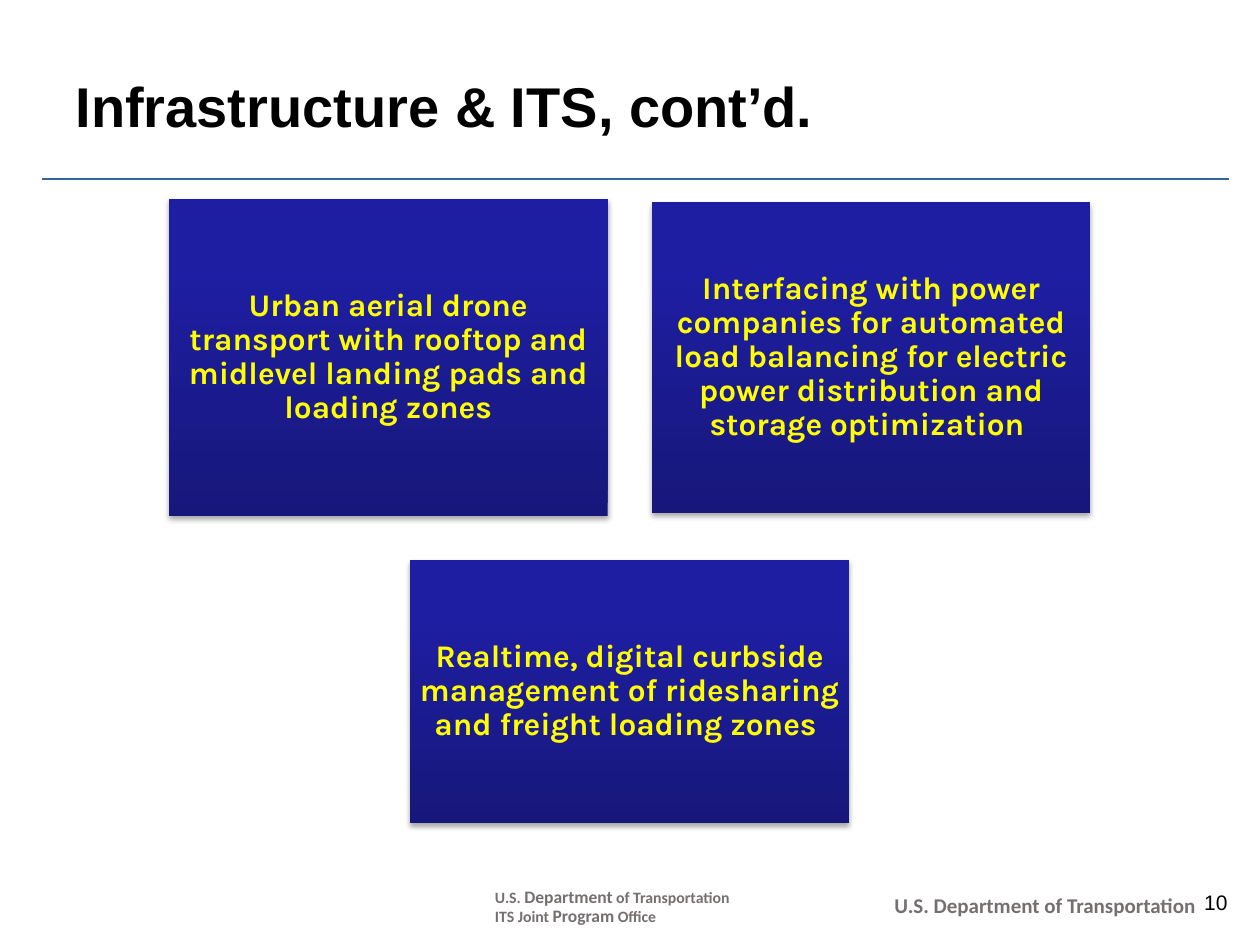
from lxml import etree
from pptx import Presentation
from pptx.dml.color import RGBColor
from pptx.enum.shapes import MSO_CONNECTOR, MSO_SHAPE
from pptx.enum.text import MSO_ANCHOR, PP_ALIGN
from pptx.oxml import parse_xml
from pptx.oxml.ns import nsdecls, qn
from pptx.util import Pt

COLORS = {"rule": "336699", "text": "000000", "footer": "757070",
          "card_text": "FFFF00", "bottom": "17177B", "middle": "1E1EA3",
          "top": "1C1CA5", "shadow": "000000"}


def add_span(para, text, size, font, color, bold=True):
    span = para.add_run()
    span.text = text
    formats = {"size": Pt(size), "name": font, "bold": bold}
    for name, value in formats.items():
        setattr(span.font, name, value)
    span.font.color.rgb = RGBColor.from_string(COLORS[color])


def add_box(left, top, width, height):
    box = page.shapes.add_textbox(Pt(left), Pt(top), Pt(width), Pt(height))
    box.text_frame.word_wrap = True
    return box.text_frame


deck = Presentation()
deck.slide_width, deck.slide_height = Pt(720), Pt(540)
page = deck.slides.add_slide(deck.slide_layouts[5])

# Title
title = page.shapes.title
place = {"left": 36, "top": 30.24, "width": 648, "height": 59.76}
for name, value in place.items():
    setattr(title, name, Pt(value))
title.text_frame.vertical_anchor = MSO_ANCHOR.MIDDLE
para = title.text_frame.paragraphs[0]
para.alignment = PP_ALIGN.LEFT
add_span(para, "Infrastructure & ITS, cont’d.", 32, "Arial", "text")

# Rule under the title
rule = page.shapes.add_connector(
    MSO_CONNECTOR.STRAIGHT, Pt(24), Pt(102.24), Pt(702), Pt(102.24))
rule.line.color.rgb = RGBColor.from_string(COLORS["rule"])
rule.line.width = Pt(1.5)
etree.SubElement(rule._element.spPr, qn("a:effectLst"))

# Cards: left, top, height, text
CARD_WIDTH = 250.8
cards = [
    (96.5, 113.76, 180.9, "Urban aerial drone transport with rooftop and "
     "midlevel landing pads and loading zones"),
    (372.4, 115.7, 177.4, "Interfacing with power companies for automated load "
     "balancing for electric power distribution and storage optimization "),
    (234.4, 319.9, 150.4, "Realtime, digital curbside management of "
     "ridesharing and freight loading zones "),
]
stops = "".join(
    f'<a:gs pos="{percent * 1000}"><a:srgbClr val="{COLORS[name]}"/></a:gs>'
    for percent, name in [(0, "bottom"), (80, "middle"), (100, "top")])
gradient = (f'<a:gradFill {nsdecls("a")} rotWithShape="1"><a:gsLst>{stops}</a:gsLst>'
            '<a:lin ang="16200000" scaled="0"/></a:gradFill>')
no_line = f'<a:ln {nsdecls("a")}><a:noFill/></a:ln>'
shadow = (f'<a:effectLst {nsdecls("a")}><a:outerShdw blurRad="{Pt(3.1)}" '
          f'dist="{Pt(1.8)}" dir="5400000" rotWithShape="0">'
          f'<a:srgbClr val="{COLORS["shadow"]}"><a:alpha val="35000"/></a:srgbClr>'
          '</a:outerShdw></a:effectLst>')

for left, top, height, text in cards:
    card = page.shapes.add_shape(
        MSO_SHAPE.RECTANGLE, Pt(left), Pt(top), Pt(CARD_WIDTH), Pt(height))
    for xml in (gradient, no_line, shadow):
        card._element.spPr.append(parse_xml(xml))
    frame = card.text_frame
    frame.word_wrap = True
    frame.vertical_anchor = MSO_ANCHOR.MIDDLE
    for side in ("left", "top", "right", "bottom"):
        setattr(frame, f"margin_{side}", Pt(5))
    para = frame.paragraphs[0]
    para.alignment = PP_ALIGN.CENTER
    para.line_spacing = 0.9
    add_span(para, text, 18, "Karla", "card_text")

# Footer: office, department, page number
office = add_box(275.76, 504, 149, 26)
office_lines = [
    [("U.S. ", 9), ("Department", 10), (" of Transportation", 9)],
    [("ITS Joint ", 9), ("Program", 10), (" Office", 9)],
]
for index, line in enumerate(office_lines):
    para = office.add_paragraph() if index else office.paragraphs[0]
    para.line_spacing = 0.9
    for text, size in line:
        add_span(para, text, size, "Calibri", "footer")

para = add_box(504, 509.76, 198, 17.3).paragraphs[0]
para.line_spacing = 0.75
add_span(para, "U.S. Department of Transportation", 12, "Calibri", "footer")

para = add_box(678.24, 504.72, 30.24, 21.6).paragraphs[0]
para.alignment = PP_ALIGN.RIGHT
add_span(para, "10", 12, "Arial", "text", bold=False)

deck.save("out.pptx")
